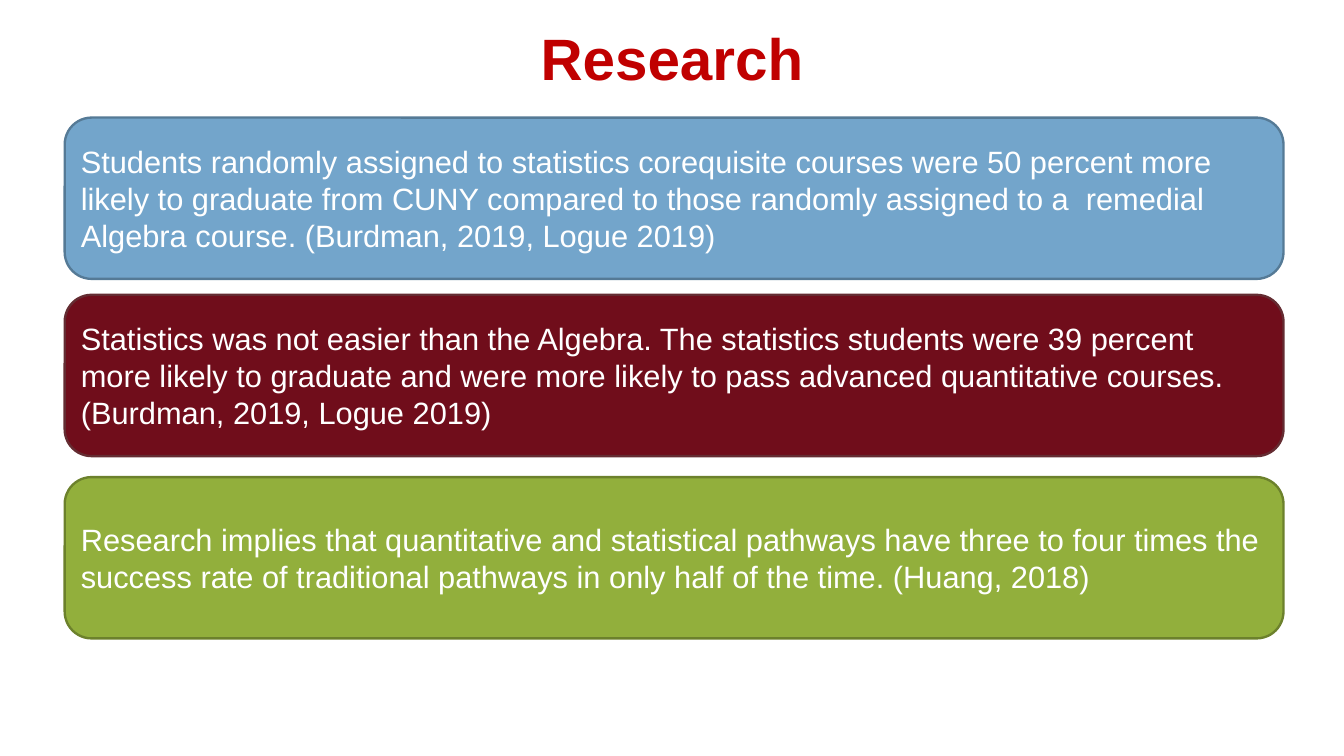
"""Build the research findings slide."""
import pptx
import pptx.dml.color
import pptx.enum.shapes
import pptx.enum.text
import pptx.util

Inches = pptx.util.Inches
Align = pptx.enum.text.PP_ALIGN
Anchor = pptx.enum.text.MSO_ANCHOR

CARDS = [
    (1.4, "73A5CB", "557A96",
     "Students randomly assigned to statistics corequisite courses were 50 percent more "
     "likely to graduate from CUNY compared to those randomly assigned to a  remedial "
     "Algebra course. (Burdman, 2019, Logue 2019)"),
    (3.51, "700D1B", "642C32",
     "Statistics was not easier than the Algebra. The statistics students were 39 percent "
     "more likely to graduate and were more likely to pass advanced quantitative courses. "
     "(Burdman, 2019, Logue 2019)"),
    (5.68, "92AF3C", "6C812C",
     "Research implies that quantitative and statistical pathways have three to four times "
     "the success rate of traditional pathways in only half of the time. (Huang, 2018)"),
]


def paint(target, color):
    """Give a fill a solid colour from a hex string."""
    target.solid()
    target.fore_color.rgb = pptx.dml.color.RGBColor.from_string(color)


def write(frame, text, size, color, align, anchor, bold=False):
    """Fill a text frame with one formatted paragraph."""
    frame.text = text
    frame.word_wrap = True
    frame.auto_size = pptx.enum.text.MSO_AUTO_SIZE.NONE
    frame.vertical_anchor = anchor
    para = frame.paragraphs[0]
    para.alignment = align
    font = para.runs[0].font
    font.name = "Arial"
    font.size = pptx.util.Pt(size)
    font.bold = bold
    paint(font.fill, color)


def add_title(slide, box, text):
    """Place the slide title in the given box."""
    title = slide.shapes.title
    title.left, title.top, title.width, title.height = map(Inches, box)
    frame = title.text_frame
    frame.margin_left = frame.margin_right = 0
    frame.margin_top = frame.margin_bottom = 0
    write(frame, text, 50, "C00000", Align.CENTER, Anchor.TOP, True)


def add_card(slide, box, fill, line, text):
    """Draw one rounded finding card in the given box."""
    kind = pptx.enum.shapes.MSO_SHAPE.ROUNDED_RECTANGLE
    card = slide.shapes.add_shape(kind, *map(Inches, box))
    card.shadow.inherit = False
    paint(card.fill, fill)
    paint(card.line.fill, line)
    card.line.width = pptx.util.Pt(2)
    write(card.text_frame, text, 26.4, "FFFFFF", Align.LEFT, Anchor.MIDDLE)


def main():
    """Build and save the deck."""
    deck = pptx.Presentation()
    deck.slide_width, deck.slide_height = Inches(16), Inches(9)
    slide = deck.slides.add_slide(deck.slide_layouts[5])
    paint(slide.background.fill, "FFFFFF")
    add_title(slide, (2.6, 0.26, 10.8, 0.85), "Research")
    for top, fill, line, text in CARDS:
        add_card(slide, (0.77, top, 14.51, 1.92), fill, line, text)
    deck.save("out.pptx")


if __name__ == "__main__":
    main()
